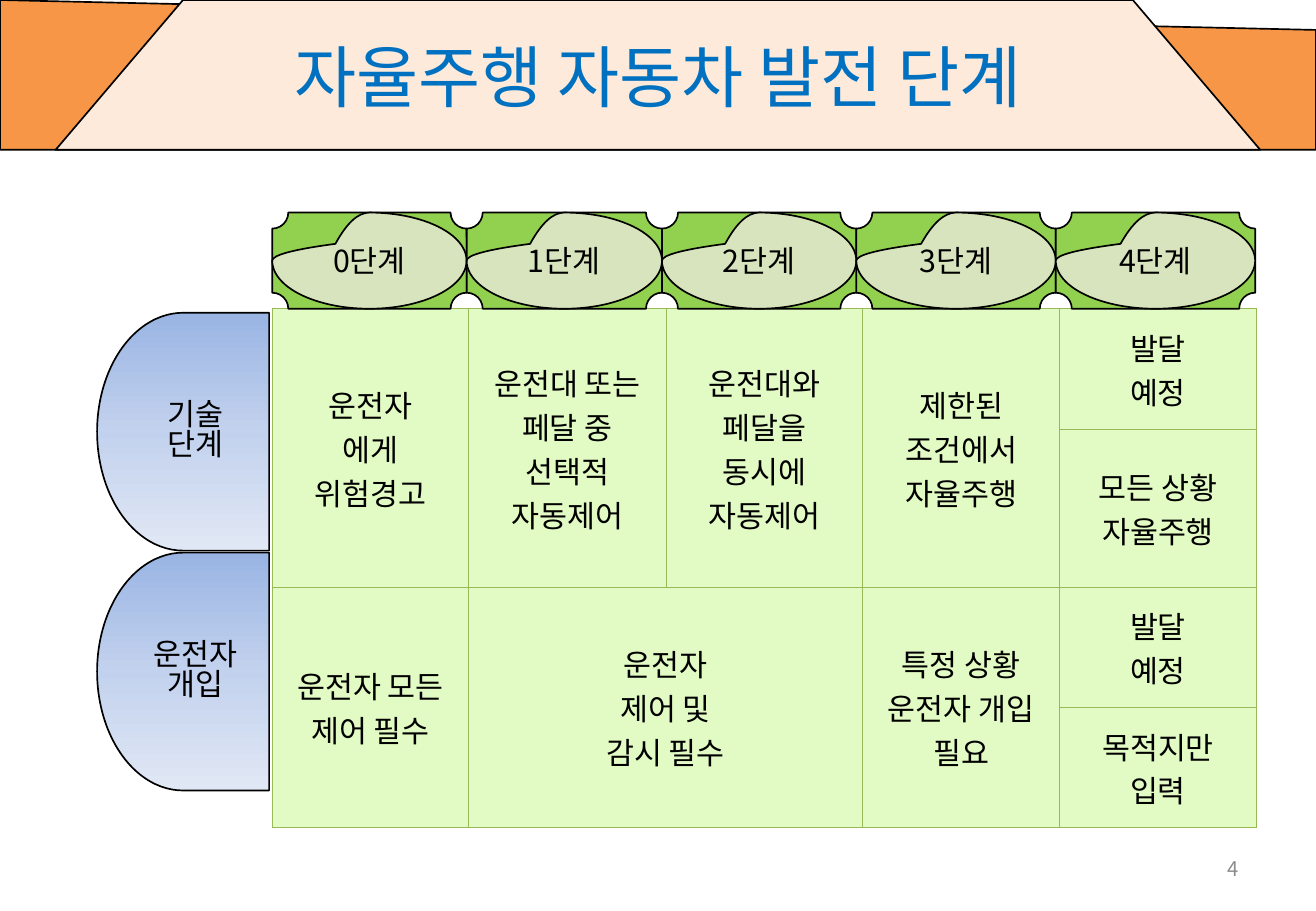
from dataclasses import dataclass

from lxml import etree
from pptx import Presentation
from pptx.dml.color import RGBColor
from pptx.enum.shapes import MSO_SHAPE
from pptx.enum.text import MSO_ANCHOR, PP_ALIGN
from pptx.oxml.ns import qn
from pptx.util import Emu, Pt

PX = 7620
CENTER, RIGHT = PP_ALIGN.CENTER, PP_ALIGN.RIGHT
MIDDLE = MSO_ANCHOR.MIDDLE
MANUAL_INPUT = MSO_SHAPE.FLOWCHART_MANUAL_INPUT
TRAPEZOID = MSO_SHAPE.TRAPEZOID
DELAY = MSO_SHAPE.FLOWCHART_DELAY
PLAQUE = MSO_SHAPE.PLAQUE
TEAR = MSO_SHAPE.TEAR


@dataclass(frozen=True)
class Theme:
    font: str = "Noto Sans CJK KR"
    title_size: int = 40
    body_size: int = 18
    number_size: int = 12
    title: str = "0070C0"
    text: str = "000000"
    number: str = "8C8C8C"
    line: str = "000000"
    banner_back: str = "F79646"
    banner: str = "FDEADA"
    plaque: str = "92D050"
    drop: str = "D7E4BD"
    cell: str = "E2FAC3"
    border: str = "98B955"
    label: tuple = ((0, "9AB5E4"), (50, "C2D1ED"), (100, "E1E8F5"))


THEME = Theme()

STEPS = [("0단계", 192), ("1단계", 193), ("2단계", 192), ("3단계", 197), ("4단계", 197)]
LABELS = ["기술\n단계", "운전자\n개입"]
CELLS = [
    (0, 0, 2, 1, "운전자\n에게\n위험경고"),
    (0, 1, 2, 1, "운전대 또는\n페달 중\n선택적\n자동제어"),
    (0, 2, 2, 1, "운전대와\n페달을\n동시에\n자동제어"),
    (0, 3, 2, 1, "제한된\n조건에서\n자율주행"),
    (0, 4, 1, 1, "발달\n예정"),
    (1, 4, 1, 1, "모든 상황\n자율주행"),
    (2, 0, 2, 1, "운전자 모든 제어 필수"),
    (2, 1, 2, 2, "운전자\n제어 및\n감시 필수"),
    (2, 3, 2, 1, "특정 상황\n운전자 개입\n필요"),
    (2, 4, 1, 1, "발달\n예정"),
    (3, 4, 1, 1, "목적지만\n입력"),
]


def emu(*lengths):
    return [Emu(n * PX) for n in lengths]


def write(tf, text, size, color, align=CENTER, spacing=None):
    tf.word_wrap = True
    for i, line in enumerate(text.split("\n")):
        p = tf.paragraphs[0] if i == 0 else tf.add_paragraph()
        p.text = line
        p.alignment = align
        if spacing:
            p.line_spacing = spacing
        p.font.size = Pt(size)
        p.font.color.rgb = RGBColor.from_string(color)
        p.font.name = THEME.font
        props = p._p.pPr.find(qn("a:defRPr"))
        etree.SubElement(props, qn("a:ea")).set("typeface", THEME.font)


def add_text(slide, box, text, size, color, align=CENTER):
    tf = slide.shapes.add_textbox(*emu(*box)).text_frame
    tf.vertical_anchor = MIDDLE
    write(tf, text, size, color, align)


def add_shape(slide, kind, box, fill, flip=False, adj=None):
    sp = slide.shapes.add_shape(kind, *emu(*box))
    sp.shadow.inherit = False
    sp.line.color.rgb = RGBColor.from_string(THEME.line)
    sp.line.width = Pt(1)
    if fill:
        sp.fill.solid()
        sp.fill.fore_color.rgb = RGBColor.from_string(fill)
    if flip:
        sp._element.spPr.find(qn("a:xfrm")).set("flipH", "1")
    if adj:
        sp.adjustments[0] = adj
    sp.text_frame.vertical_anchor = MIDDLE
    return sp


def fill_gradient(sp, stops):
    grad = etree.Element(qn("a:gradFill"), rotWithShape="1")
    stop_list = etree.SubElement(grad, qn("a:gsLst"))
    for position, color in stops:
        stop = etree.SubElement(stop_list, qn("a:gs"), pos=str(position * 1000))
        etree.SubElement(stop, qn("a:srgbClr"), val=color)
    etree.SubElement(grad, qn("a:lin"), ang="5400000", scaled="0")
    sp._element.spPr.find(qn("a:prstGeom")).addnext(grad)


def add_banner(slide, x, y, w, h):
    add_shape(slide, MANUAL_INPUT, (x, y, w, h), THEME.banner_back, flip=True)
    add_shape(slide, TRAPEZOID, (x + 55, y, w - 110, h), THEME.banner, adj=0.85)
    add_text(slide, (x + 65, y, w - 130, h + 2), "자율주행 자동차 발전 단계",
             THEME.title_size, THEME.title)


def add_labels(slide, x, y, w, h, pitch):
    for i, text in enumerate(LABELS):
        sp = add_shape(slide, DELAY, (x, y + i * pitch, w, h), None, flip=True)
        fill_gradient(sp, THEME.label)
        write(sp.text_frame, text, THEME.body_size, THEME.text, spacing=0.82)


def add_steps(slide, x, y, h):
    for text, w in STEPS:
        box = (x, y, w, h)
        add_shape(slide, PLAQUE, box, THEME.plaque)
        drop = add_shape(slide, TEAR, box, THEME.drop, flip=True, adj=0.35)
        write(drop.text_frame, text, THEME.body_size, THEME.text)
        x += w


def style_cell(cell):
    cell.fill.solid()
    cell.fill.fore_color.rgb = RGBColor.from_string(THEME.cell)
    cell.vertical_anchor = MIDDLE
    props = cell._tc.get_or_add_tcPr()
    for i, side in enumerate(("lnL", "lnR", "lnT", "lnB")):
        ln = etree.Element(qn(f"a:{side}"), w=str(Pt(0.75)))
        solid = etree.SubElement(ln, qn("a:solidFill"))
        etree.SubElement(solid, qn("a:srgbClr"), val=THEME.border)
        props.insert(i, ln)


def add_stage_table(slide, x, y, w, h, rows=4, cols=5):
    table = slide.shapes.add_table(rows, cols, *emu(x, y, w, h)).table
    table.first_row = False
    table.horz_banding = False
    for i, column in enumerate(table.columns):
        column.width = Emu((round(w * (i + 1) / cols) - round(w * i / cols)) * PX)
    for row in table.rows:
        row.height = Emu(h // rows * PX)
    for cell in table.iter_cells():
        style_cell(cell)
    for row, col, height, width, text in CELLS:
        cell = table.cell(row, col)
        if height * width > 1:
            cell.merge(table.cell(row + height - 1, col + width - 1))
        write(cell.text_frame, text, THEME.body_size, THEME.text)


def main():
    prs = Presentation()
    prs.slide_width, prs.slide_height = emu(1300, 900)
    slide = prs.slides.add_slide(prs.slide_layouts[6])
    add_banner(slide, 0, 0, 1300, 148)
    add_stage_table(slide, 269, 305, 972, 476)
    add_text(slide, (931, 834, 304, 48), "4", THEME.number_size, THEME.number, RIGHT)
    add_steps(slide, 269, 210, 95)
    add_labels(slide, 96, 309, 170, 235, 237)
    prs.save("out.pptx")


if __name__ == "__main__":
    main()
